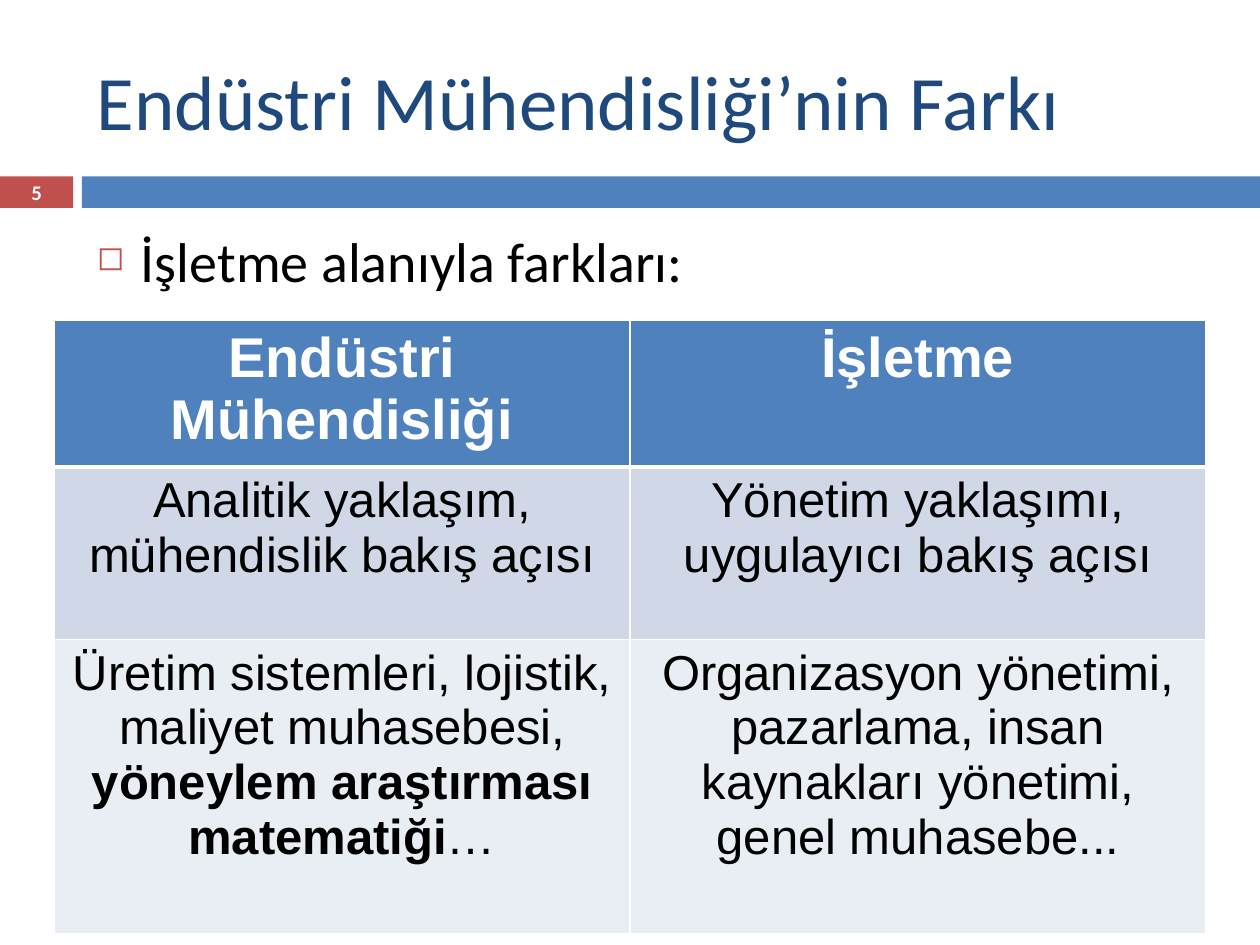
"""Build a slide comparing industrial engineering with business studies."""
from dataclasses import dataclass

from lxml import etree
from pptx import Presentation
from pptx.dml.color import RGBColor
from pptx.enum.shapes import MSO_SHAPE
from pptx.enum.text import MSO_ANCHOR, PP_ALIGN
from pptx.oxml.ns import qn
from pptx.util import Inches, Pt

RECT = MSO_SHAPE.RECTANGLE
LEFT, CENTER = PP_ALIGN.LEFT, PP_ALIGN.CENTER
TOP, MIDDLE = MSO_ANCHOR.TOP, MSO_ANCHOR.MIDDLE

WIDTH, HEIGHT = 10, 7.5
MARGIN, SPAN = 0.67, 8.92
BAND_TOP, BAND_TALL = 1.4, 0.25
TAG_WIDE, BAND_LEFT = 0.58, 0.65
TABLE_LEFT, TABLE_TOP = 0.43, 2.54
COL_WIDE = 4.57
ROWS = (1.09, 1.37, 2.33)

HEADS = ("Endüstri Mühendisliği", "İşletme")
BODY = (
    (
        [("Analitik yaklaşım, mühendislik bakış açısı", False)],
        [("Yönetim yaklaşımı, uygulayıcı bakış açısı", False)],
    ),
    (
        [
            ("Üretim sistemleri, lojistik, maliyet muhasebesi, ", False),
            ("yöneylem araştırması matematiği", True),
            ("…", False),
        ],
        [("Organizasyon yönetimi, pazarlama, insan kaynakları yönetimi, "
          "genel muhasebe...", False)],
    ),
)


@dataclass(frozen=True)
class Theme:
    """Hold the colours, fonts and type sizes of the slide."""

    blue: str = "4F81BD"
    navy: str = "1F497D"
    red: str = "C0504D"
    white: str = "FFFFFF"
    black: str = "000000"
    bands: tuple = ("D0D8E8", "E9EDF4")
    text: str = "Calibri"
    grid: str = "Arial"
    title: float = 44
    lead: float = 32
    cell: float = 28
    tag: float = 11.9


THEME = Theme()


def rgb(code):
    """Turn a hex code into a colour."""
    return RGBColor.from_string(code)


def style(para, face, size, color, bold=False, align=LEFT):
    """Set the font and alignment of a paragraph."""
    para.alignment = align
    font = para.font
    font.name, font.size, font.bold = face, Pt(size), bold
    font.color.rgb = rgb(color)


def add_bar(slide, left, wide, color):
    """Draw one plain bar of the band below the title."""
    bar = slide.shapes.add_shape(
        RECT, *map(Inches, (left, BAND_TOP, wide, BAND_TALL)))
    bar.shadow.inherit = False
    bar.fill.solid()
    bar.fill.fore_color.rgb = rgb(color)
    bar.line.fill.background()


def add_text(slide, box, text, anchor=TOP):
    """Place a wrapping text box and return its paragraph."""
    frame = slide.shapes.add_textbox(*map(Inches, box)).text_frame
    frame.word_wrap = True
    frame.vertical_anchor = anchor
    para = frame.paragraphs[0]
    para.add_run().text = text
    return para


def add_mark(para, sign, color, share, indent):
    """Give a paragraph a hanging bullet."""
    props = para._p.get_or_add_pPr()
    props.set("marL", str(Inches(indent)))
    props.set("indent", str(-Inches(indent)))
    tint = etree.SubElement(props, qn("a:buClr"))
    etree.SubElement(tint, qn("a:srgbClr"), val=color)
    etree.SubElement(props, qn("a:buSzPct"), val=str(share * 1000))
    etree.SubElement(props, qn("a:buChar"), char=sign)


def add_edge(cell, side, width):
    """Draw one white border of a cell."""
    line = etree.Element(qn(f"a:ln{side}"), w=str(Pt(width)))
    fill = etree.SubElement(line, qn("a:solidFill"))
    etree.SubElement(fill, qn("a:srgbClr"), val=THEME.white)
    return line


def fill_cell(cell, runs, back, size, color, bold=False, top=1, base=1):
    """Write, colour and border one table cell."""
    para = cell.text_frame.paragraphs[0]
    for text, strong in runs:
        run = para.add_run()
        run.text = text
        if strong:
            run.font.bold = True
    style(para, THEME.grid, size, color, bold, CENTER)
    cell.fill.solid()
    cell.fill.fore_color.rgb = rgb(back)
    props = cell._tc.get_or_add_tcPr()
    edges = (("L", 1), ("R", 1), ("T", top), ("B", base))
    for spot, (side, width) in enumerate(edges):
        props.insert(spot, add_edge(cell, side, width))


def add_grid(slide):
    """Add the table that compares the two fields."""
    count = len(HEADS)
    box = (TABLE_LEFT, TABLE_TOP, COL_WIDE * count, sum(ROWS))
    table = slide.shapes.add_table(
        len(ROWS), count, *map(Inches, box)).table
    for col in table.columns:
        col.width = Inches(COL_WIDE)
    for row, tall in zip(table.rows, ROWS):
        row.height = Inches(tall)
    for col, head in enumerate(HEADS):
        fill_cell(table.cell(0, col), [(head, False)], THEME.blue,
                  THEME.lead, THEME.white, bold=True, base=3)
    for row, (cells, back) in enumerate(zip(BODY, THEME.bands), 1):
        for col, runs in enumerate(cells):
            fill_cell(table.cell(row, col), runs, back, THEME.cell,
                      THEME.black, top=3 if row == 1 else 1)


def main():
    """Build and save the slide."""
    deck = Presentation()
    deck.slide_width, deck.slide_height = Inches(WIDTH), Inches(HEIGHT)
    slide = deck.slides.add_slide(deck.slide_layouts[6])

    add_bar(slide, 0, TAG_WIDE, THEME.red)
    add_bar(slide, BAND_LEFT, WIDTH - BAND_LEFT, THEME.blue)

    title = add_text(slide, (MARGIN, 0.25, SPAN, 1.08),
                     "Endüstri Mühendisliği’nin Farkı", MIDDLE)
    style(title, THEME.text, THEME.title, THEME.navy)

    tag = add_text(slide, (0, BAND_TOP, TAG_WIDE, BAND_TALL), "5", MIDDLE)
    style(tag, THEME.text, THEME.tag, THEME.white, True, CENTER)

    add_grid(slide)

    lead = add_text(slide, (MARGIN, 1.75, SPAN, 4.92),
                    "İşletme alanıyla farkları:")
    add_mark(lead, "◻", THEME.red, 60, 0.35)
    style(lead, THEME.text, THEME.lead, THEME.black)

    deck.save("out.pptx")


if __name__ == "__main__":
    main()
